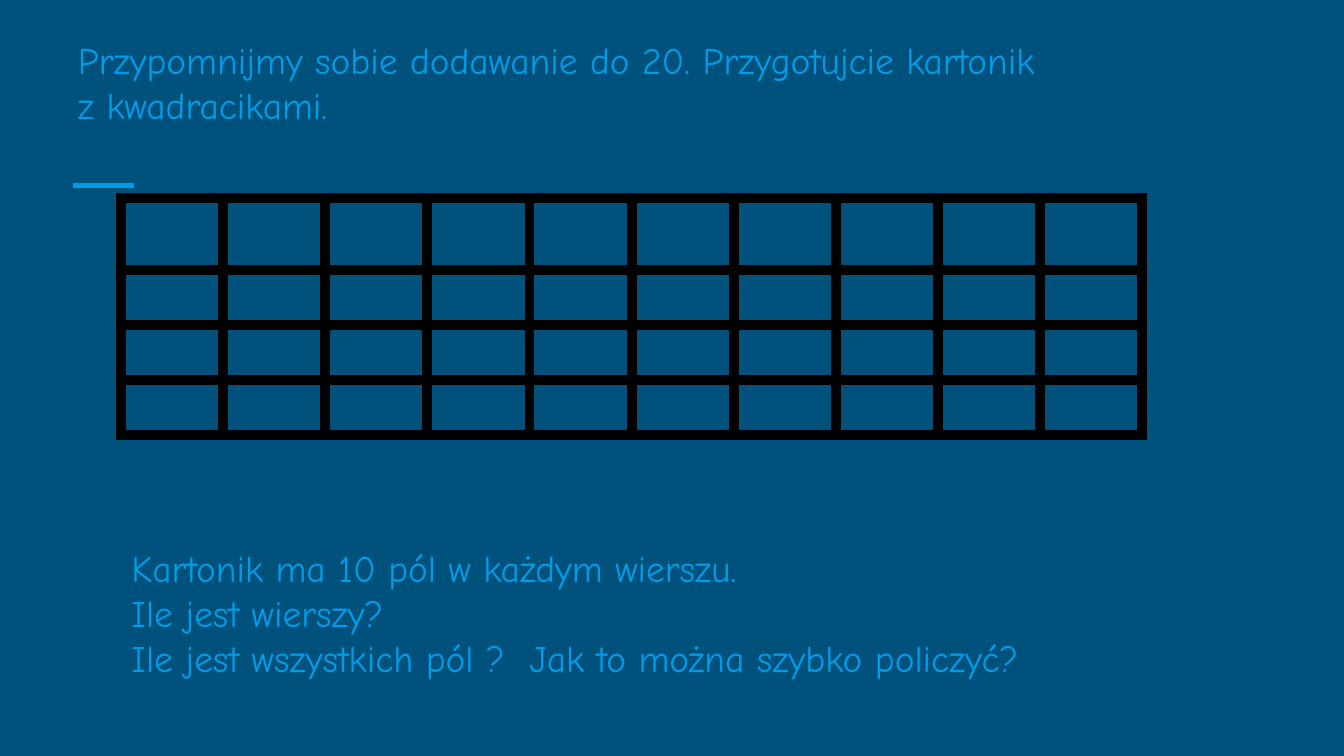
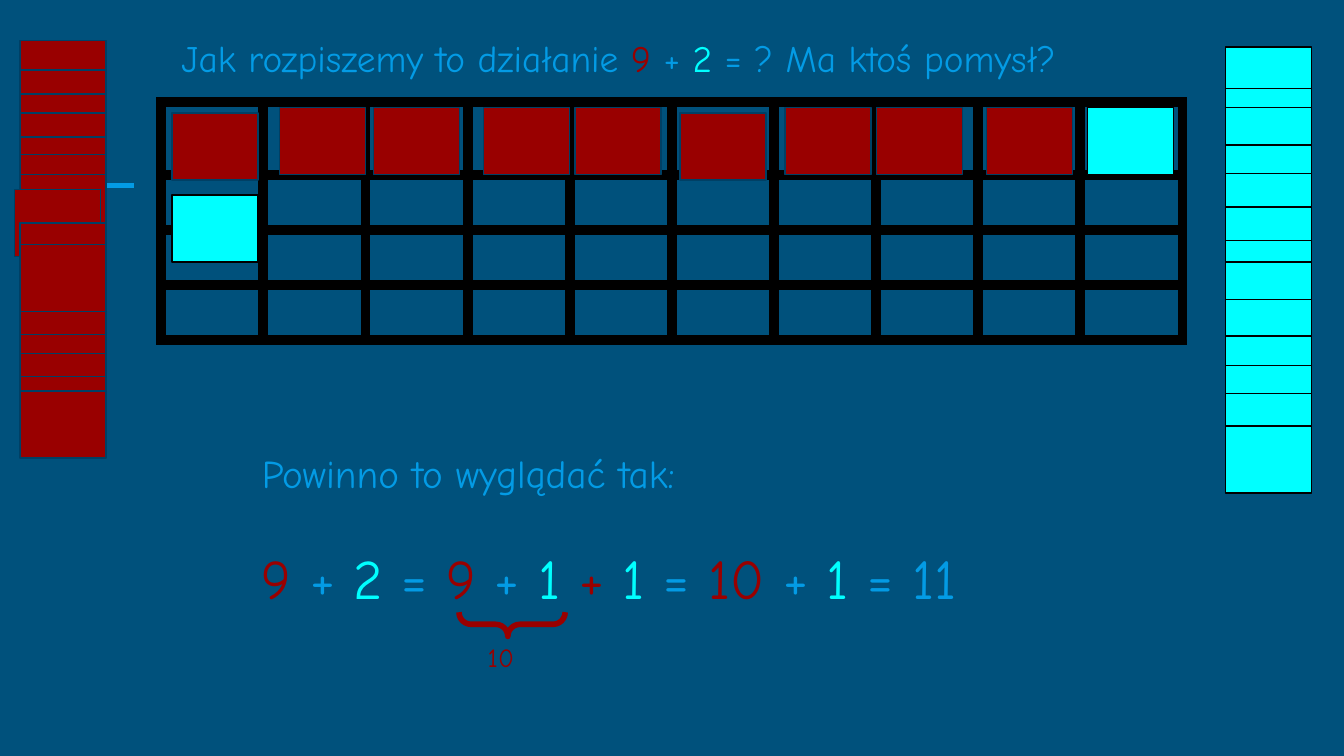
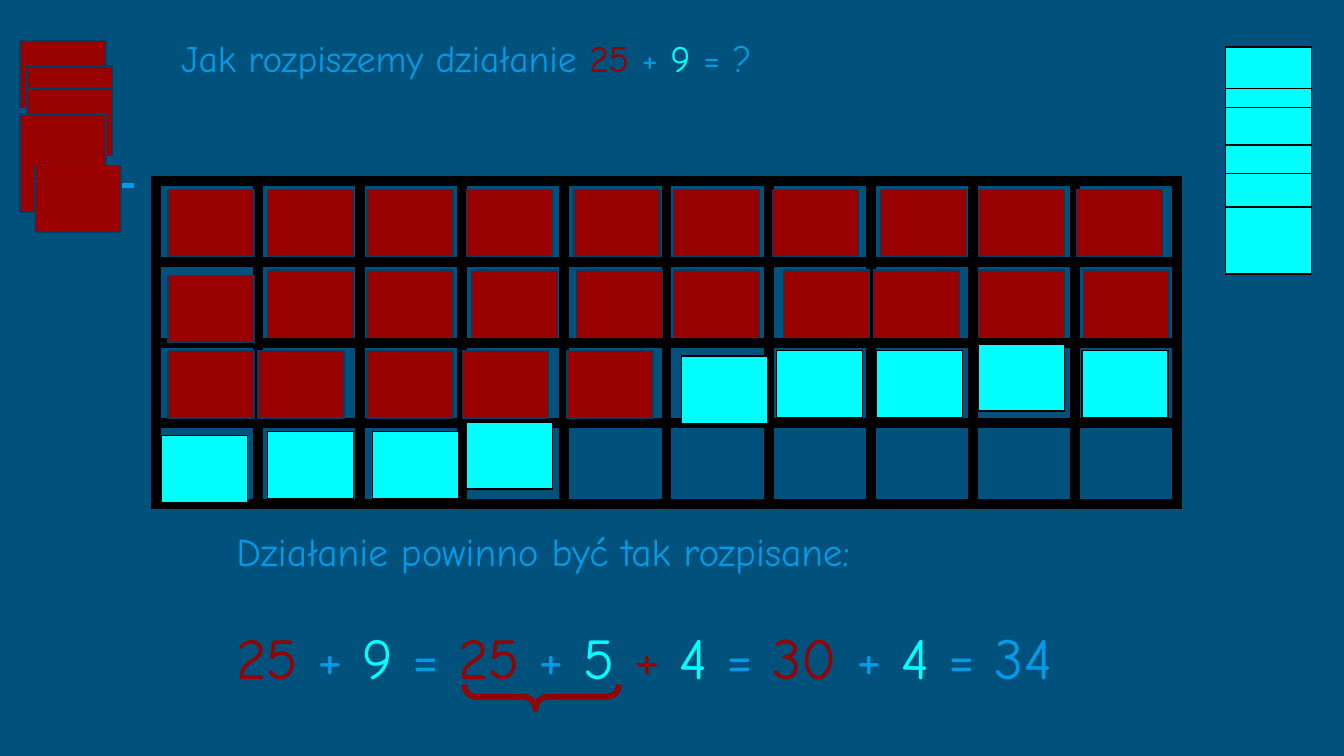
import itertools

import pptx
import pptx.dml.color
import pptx.enum.shapes
import pptx.enum.text
import pptx.oxml
import pptx.oxml.ns
import pptx.util

IN, PT = pptx.util.Inches, pptx.util.Pt
SHAPE = pptx.enum.shapes.MSO_SHAPE
SLIDE_W = 10
SLIDE_H = SLIDE_W * 9 / 16
FONT = "Comic Neue"
NAVY, BLUE, RED, CYAN, BLACK, EDGE = "00517C", "039BE5", "990000", "00FFFF", "000000", "004065"
TILE_W, TILE_H = 0.64, 0.5
TILE_EDGE = {RED: EDGE, CYAN: BLACK}
COLUMNS, COLUMN_W = 10, 0.76
LOW_ROWS = [0.54, 0.41, 0.41, 0.41]
EVEN_ROWS = [0.6] * 4
CYAN_STACK = [0.35, 0.66, 0.8, 1.08, 1.29, 1.54, 1.79, 1.95, 2.23, 2.5, 2.72, 2.93, 3.17]

SLIDES = [
    {
        "title": ((0.48, 0.18, 9.03, 0.87),
                  [("Przypomnijmy sobie dodawanie do 20. Przygotujcie kartonik \nz kwadracikami.", BLUE)]),
        "grid": (0.9, 1.47, LOW_ROWS),
        "tiles": [],
        "texts": [((0.88, 3.96, 7.64, 1.23), [
            (20, 0, [("Kartonik ma 10 pól w każdym wierszu.", BLUE)]),
            (20, 0, [("Ile jest wierszy?", BLUE)]),
            (20, 0, [("Ile jest wszystkich pól ?  Jak to można szybko policzyć?", BLUE)]),
        ])],
    },
    {
        "title": ((1.25, 0.16, 7.42, 0.5),
                  [("Jak rozpiszemy to działanie ", BLUE), ("9", RED), (" + ", BLUE), ("2 ", CYAN),
                   ("= ? Ma ktoś pomysł?", BLUE)]),
        "grid": (1.2, 0.76, LOW_ROWS),
        "tiles": [
            (RED, [0.15], [2.3, 2.49, 2.63, 2.8, 2.91]),
            (RED, [2.08, 2.78, 3.6, 4.28, 5.84, 6.52, 7.34], [0.8]),
            (RED, [1.28, 5.06], [0.84]),
            (CYAN, [9.12], CYAN_STACK),
            (CYAN, [1.28], [1.45]),
            (CYAN, [8.09], [0.8]),
            (RED, [0.15], [0.3, 0.52, 0.7, 0.84, 1.02, 1.15, 1.3]),
            (RED, [0.11], [1.41]),
            (RED, [0.15], [1.66, 1.82]),
        ],
        "texts": [
            ((1.85, 3.24, 5.98, 1.94), [
                (21, 0, [("Powinno to wyglądać tak:", BLUE)]),
                (30, 25.3, [("9", RED), (" + ", BLUE), ("2 ", CYAN), ("= ", BLUE), ("9 ", RED),
                            ("+", BLUE), (" 1", CYAN), (" + ", RED), ("1 ", CYAN), ("= ", BLUE),
                            ("10 ", RED), ("+ ", BLUE), ("1 ", CYAN), ("= 11", BLUE)]),
            ]),
            ((3.53, 4.67, 0.79, 0.26), [(14, 0, [("10", RED)])]),
        ],
        "brace": (3.72, 4.25, 0.18, 0.79),
    },
    {
        "title": ((1.25, 0.16, 7.42, 0.54),
                  [("Jak rozpiszemy działanie ", BLUE), ("25 ", RED), ("+ ", BLUE), ("9 ", CYAN),
                   ("= ?", BLUE)]),
        "grid": (1.16, 1.35, EVEN_ROWS),
        "tiles": [
            (RED, [1.25, 1.99, 2.73, 3.47, 4.27, 5.01, 5.75, 6.55, 7.28, 8.01], [1.41]),
            (RED, [1.25], [2.05]),
            (RED, [1.99, 2.73, 3.51, 4.29, 5.01, 5.83, 6.5, 7.28, 8.06], [2.01]),
            (RED, [1.25, 1.92, 2.73, 3.44, 4.22], [2.61]),
            (CYAN, [9.12], CYAN_STACK[:6]),
            (CYAN, [5.07], [2.65]),
            (CYAN, [5.78, 6.52, 8.05], [2.61]),
            (CYAN, [7.28], [2.56]),
            (CYAN, [1.2], [3.24]),
            (CYAN, [1.99, 2.77], [3.21]),
            (CYAN, [3.47], [3.14]),
            (RED, [0.15], [0.3, 1.08]),
            (RED, [0.2], [0.49, 0.66]),
            (RED, [0.15], [0.85]),
            (RED, [0.26], [1.23]),
        ],
        "texts": [((1.66, 3.82, 6.77, 1.71), [
            (21, 0, [("Działanie powinno być tak rozpisane:", BLUE)]),
            (31, 25.3, [("25", RED), (" + ", BLUE), ("9 ", CYAN), ("= ", BLUE), ("25 ", RED),
                        ("+ ", BLUE), ("5", CYAN), (" + ", RED), ("4 ", CYAN), ("= ", BLUE),
                        ("30 ", RED), ("+ ", BLUE), ("4 ", CYAN), ("= 34", BLUE)]),
        ])],
        "brace": (3.94, 4.61, 0.18, 1.15),
    },
]


def rgb(value):
    return pptx.dml.color.RGBColor.from_string(value)


def set_all(obj, values):
    for name, value in values.items():
        setattr(obj, name, value)


def set_line(shape, colour, width):
    shape.line.color.rgb = rgb(colour)
    shape.line.width = PT(width)


def write(sp, paragraphs):
    tf = sp.text_frame
    set_all(tf, {"word_wrap": True, "auto_size": pptx.enum.text.MSO_AUTO_SIZE.NONE,
                 "vertical_anchor": pptx.enum.text.MSO_ANCHOR.TOP,
                 "margin_left": IN(0.1), "margin_right": IN(0.1),
                 "margin_top": IN(0.1), "margin_bottom": IN(0.1)})
    for i, (size, gap, runs) in enumerate(paragraphs):
        p = tf.add_paragraph() if i else tf.paragraphs[0]
        set_all(p, {"alignment": pptx.enum.text.PP_ALIGN.LEFT, "space_before": PT(gap)})
        for text, colour in runs:
            for j, part in enumerate(text.split("\n")):
                if j:
                    p.add_line_break()
                r = p.add_run()
                r.text = part
                set_all(r.font, {"name": FONT, "size": PT(size)})
                r.font.color.rgb = rgb(colour)


def add_title(s, box, runs):
    sp = s.shapes.title
    set_all(sp, dict(zip(("left", "top", "width", "height"), map(IN, box))))
    write(sp, [(20, 0, runs)])


def add_accent(s):
    line = s.shapes.add_connector(pptx.enum.shapes.MSO_CONNECTOR.STRAIGHT,
                                  IN(0.54), IN(1.38), IN(1), IN(1.38))
    set_line(line, BLUE, 3)
    line._element.spPr.append(pptx.oxml.parse_xml(
        f'<a:effectLst {pptx.oxml.ns.nsdecls("a")}/>'))


def add_grid(s, x, y, rows):
    table = s.shapes.add_table(len(rows), COLUMNS, IN(x), IN(y),
                               IN(COLUMNS * COLUMN_W), IN(sum(rows))).table
    set_all(table, {"first_row": False, "horz_banding": False})
    for column in table.columns:
        column.width = IN(COLUMN_W)
    for row, height in zip(table.rows, rows):
        row.height = IN(height)
    for cell in table.iter_cells():
        cell.fill.background()
        for i, side in enumerate("LRTB"):
            cell._tc.get_or_add_tcPr().insert(i, pptx.oxml.parse_xml(
                f'<a:ln{side} {pptx.oxml.ns.nsdecls("a")} w="{PT(6)}"><a:solidFill>'
                f'<a:srgbClr val="{BLACK}"/></a:solidFill></a:ln{side}>'))


def add_tiles(s, colour, xs, ys):
    for x, y in itertools.product(xs, ys):
        sp = s.shapes.add_shape(SHAPE.RECTANGLE, IN(x), IN(y), IN(TILE_W), IN(TILE_H))
        sp.shadow.inherit = False
        sp.fill.solid()
        sp.fill.fore_color.rgb = rgb(colour)
        set_line(sp, TILE_EDGE[colour], 0.75)


def add_brace(s, box):
    sp = s.shapes.add_shape(SHAPE.LEFT_BRACE, *map(IN, box))
    sp.shadow.inherit = False
    sp.rotation = 270
    sp.adjustments[0], sp.adjustments[1] = 0.5, 0.46
    sp.fill.background()
    set_line(sp, RED, 3)


def main():
    prs = pptx.Presentation()
    set_all(prs, {"slide_width": IN(SLIDE_W), "slide_height": IN(SLIDE_H)})
    fill = prs.slide_master.background.fill
    fill.solid()
    fill.fore_color.rgb = rgb(NAVY)
    for content in SLIDES:
        s = prs.slides.add_slide(prs.slide_layouts[5])
        add_title(s, *content["title"])
        add_accent(s)
        add_grid(s, *content["grid"])
        for group in content["tiles"]:
            add_tiles(s, *group)
        for box, paragraphs in content["texts"]:
            write(s.shapes.add_textbox(*map(IN, box)), paragraphs)
        if "brace" in content:
            add_brace(s, content["brace"])
    prs.save("out.pptx")


if __name__ == "__main__":
    main()
